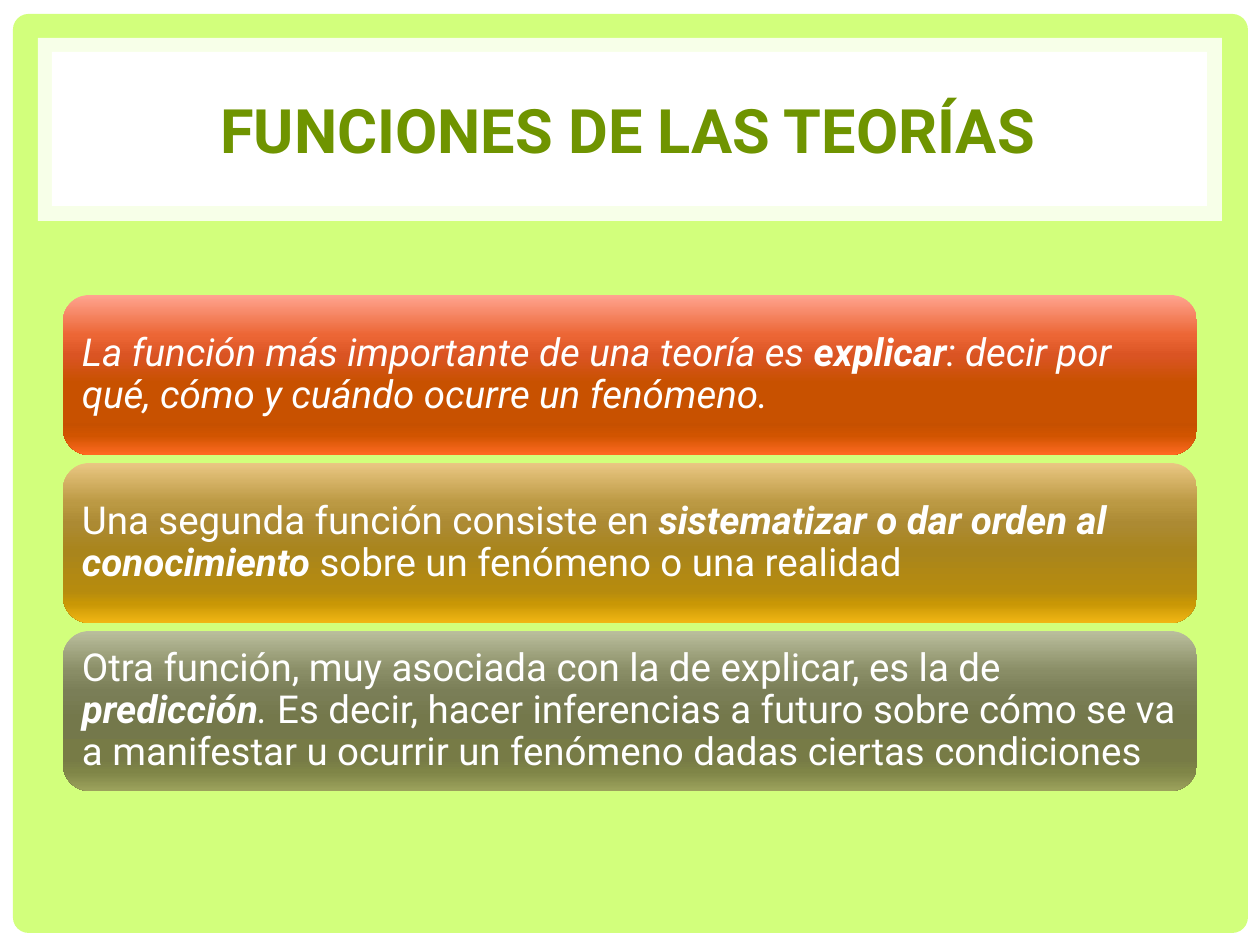
"""Build the slide on the functions of theories."""
import pptx
import pptx.dml.color
import pptx.enum.shapes
import pptx.enum.text
import pptx.oxml
import pptx.oxml.ns
import pptx.util

PX = 914400 / 126
COLORS = {"white": "FFFFFF", "lime": "D2FF7C", "title": "6F9400"}
STOPS = [0, 25, 38, 55, 80, 88, 100]
RECT = pptx.enum.shapes.MSO_SHAPE.RECTANGLE
ROUND = pptx.enum.shapes.MSO_SHAPE.ROUNDED_RECTANGLE
ALIGN = pptx.enum.text.PP_ALIGN
FRAME = [
    (RECT, (0, 0, 1260, 945), "white"),
    (ROUND, (13, 14, 1235, 919), "lime"),
    (RECT, (38, 38, 1184, 183), "white"),
    (RECT, (52, 52, 1155, 154), "white"),
]
CARDS = [
    (["FFA490", "EC6635", "DA5423", "C85100", "C65000", "D15400", "FF6A22"],
     [("La función más importante de una teoría es ", "i"),
      ("explicar", "bi"),
      (": decir por qué, cómo y cuándo ocurre un fenómeno.", "i")]),
    (["EAC783", "BB9943", "AC8A33", "A9851C", "B68B0E", "C99705", "F1B614"],
     [("Una segunda función consiste en ", ""),
      ("sistematizar o dar orden al conocimiento ", "bi"),
      ("sobre un fenómeno o una realidad", "")]),
    (["BBBF9D", "898D66", "7A7E57", "74784B", "777B46", "7F8547", "9CA25C"],
     [("Otra función, muy asociada con la de explicar, es la de ", ""),
      ("predicción", "bi"),
      (". ", "i"),
      ("Es decir, hacer inferencias a futuro sobre cómo se va a manifestar "
       "u ocurrir un fenómeno dadas ciertas condiciones", "")]),
]


def add_box(shapes, kind, box):
    sp = shapes.add_shape(kind, *[round(v * PX) for v in box])
    sp.shadow.inherit = False
    sp.line.fill.background()
    return sp


def write(tf, runs, size, color, align, spacing=None, inset=None):
    tf.word_wrap = True
    tf.auto_size = pptx.enum.text.MSO_AUTO_SIZE.NONE
    tf.vertical_anchor = pptx.enum.text.MSO_ANCHOR.MIDDLE
    if inset is not None:
        tf.margin_left = tf.margin_top = tf.margin_right = tf.margin_bottom = round(inset * PX)
    p = tf.paragraphs[0]
    p.alignment = align
    p.line_spacing = spacing
    for text, style in runs:
        r = p.add_run()
        r.text = text
        r.font.name = "Roboto"
        r.font.size = pptx.util.Pt(size)
        r.font.bold = "b" in style
        r.font.italic = "i" in style
        r.font.color.rgb = pptx.dml.color.RGBColor.from_string(COLORS[color])


prs = pptx.Presentation()
prs.slide_width = round(1260 * PX)
prs.slide_height = round(945 * PX)
slide = prs.slides.add_slide(prs.slide_layouts[5])
shapes = slide.shapes
slide.background.fill.solid()
slide.background.fill.fore_color.rgb = pptx.dml.color.RGBColor.from_string(COLORS["lime"])

panels = []
for kind, box, color in FRAME:
    sp = add_box(shapes, kind, box)
    sp.fill.solid()
    sp.fill.fore_color.rgb = pptx.dml.color.RGBColor.from_string(COLORS[color])
    panels.append(sp)
panels[1].adjustments[0] = 0.017
tint = panels[2].fill._xPr.find(".//" + pptx.oxml.ns.qn("a:srgbClr"))
tint.append(pptx.oxml.parse_xml(f'<a:alpha {pptx.oxml.ns.nsdecls("a")} val="83000"/>'))

title = shapes.title
title.left, title.top, title.width, title.height = [round(v * PX) for v in (59, 57, 1138, 144)]
write(title.text_frame, [("FUNCIONES DE LAS TEORÍAS", "b")], 35, "title", ALIGN.CENTER)
panels[-1]._element.addnext(title._element)

for i, (colors, runs) in enumerate(CARDS):
    top = 295 + 168 * i
    card = add_box(shapes, ROUND, (63, top, 1134, 160))
    stops = "".join(
        f'<a:gs pos="{pos * 1000}"><a:srgbClr val="{color}"/></a:gs>'
        for pos, color in zip(STOPS, colors))
    card._element.spPr.find(pptx.oxml.ns.qn("a:prstGeom")).addnext(pptx.oxml.parse_xml(
        f'<a:gradFill {pptx.oxml.ns.nsdecls("a")} rotWithShape="1"><a:gsLst>{stops}</a:gsLst>'
        '<a:lin ang="5400000" scaled="0"/></a:gradFill>'))
    label = shapes.add_textbox(*[round(v * PX) for v in (71, top + 8, 1119, 144)])
    write(label.text_frame, runs, 22, "white", ALIGN.LEFT, spacing=0.9, inset=11)

prs.save("out.pptx")
